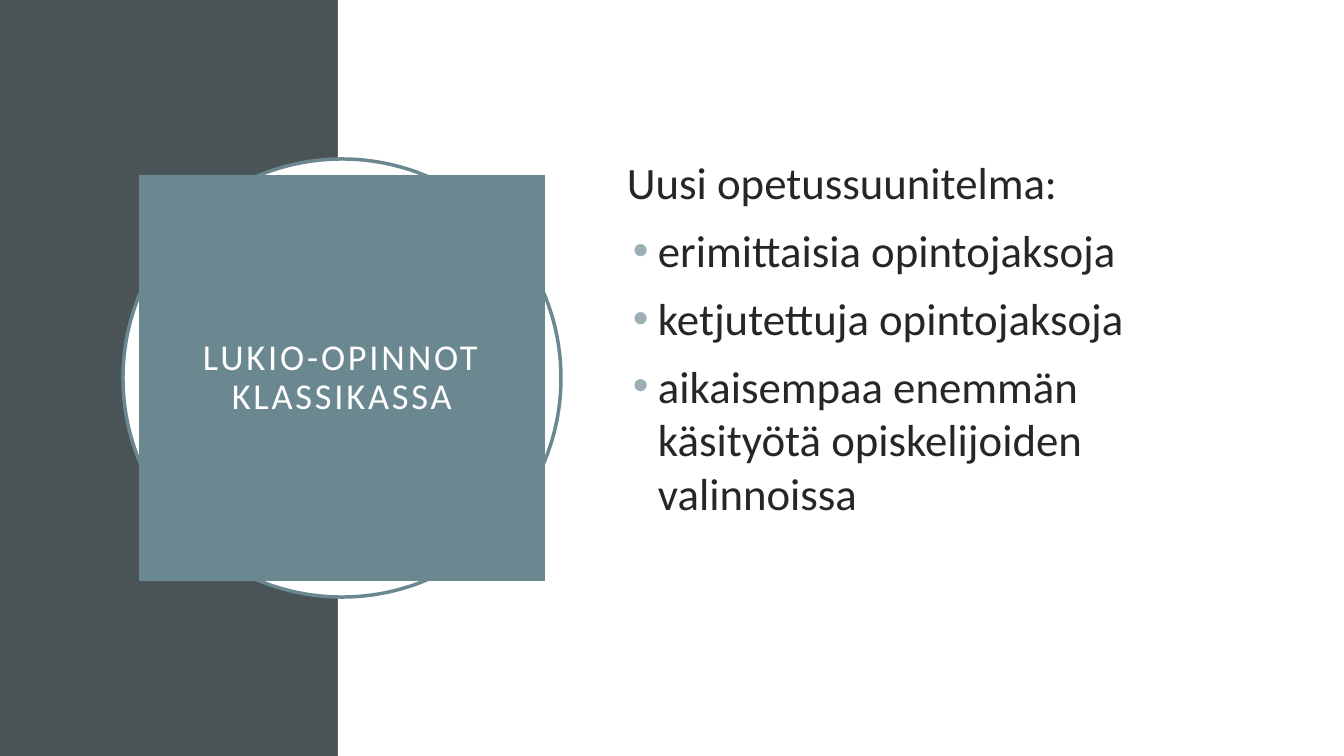
from dataclasses import dataclass

from lxml import etree
from pptx import Presentation
from pptx.dml.color import RGBColor
from pptx.enum.shapes import MSO_SHAPE
from pptx.enum.text import MSO_ANCHOR, PP_ALIGN
from pptx.oxml.ns import qn
from pptx.util import Pt

RECTANGLE = MSO_SHAPE.RECTANGLE
OVAL = MSO_SHAPE.OVAL
TOP, MIDDLE = MSO_ANCHOR.TOP, MSO_ANCHOR.MIDDLE
LEFT, CENTER = PP_ALIGN.LEFT, PP_ALIGN.CENTER

EMU_PER_PX = 12192000 / 1344
PAGE_WIDTH, PAGE_HEIGHT = 1344, 756
BAND_WIDTH = 338
FONT = "Calibri"
COLORS = {
    "slate": "4A5356",
    "teal": "6B8891",
    "bullet": "9BAFB5",
    "ink": "262626",
    "white": "FFFFFF",
}


@dataclass(frozen=True)
class Panel:
    kind: int
    left: int
    top: int
    width: int
    height: int
    fill: str
    line: str = ""


PANELS = [
    Panel(RECTANGLE, 0, 0, BAND_WIDTH, PAGE_HEIGHT, "slate"),
    Panel(RECTANGLE, BAND_WIDTH, 0, PAGE_WIDTH - BAND_WIDTH, PAGE_HEIGHT, "white"),
    Panel(OVAL, 123, 159, 438, 438, "white", "teal"),
]
TITLE_PANEL = Panel(RECTANGLE, 139, 175, 406, 406, "teal")
TITLE = "LUKIO-OPINNOT KLASSIKASSA"
HEADING = "Uusi opetussuunitelma:"
COURSE_POINTS = [
    "erimittaisia opintojaksoja",
    "ketjutettuja opintojaksoja",
    "aikaisempaa enemmän käsityötä opiskelijoiden valinnoissa",
]


def px(length: int) -> int:
    return round(length * EMU_PER_PX)


def color(name: str) -> RGBColor:
    return RGBColor.from_string(COLORS[name])


def draw_panel(page, panel: Panel):
    shape = page.shapes.add_shape(
        panel.kind, px(panel.left), px(panel.top), px(panel.width), px(panel.height)
    )
    shape.shadow.inherit = False
    shape.fill.solid()
    shape.fill.fore_color.rgb = color(panel.fill)
    if panel.line:
        shape.line.color.rgb = color(panel.line)
        shape.line.width = Pt(2.5)
    else:
        shape.line.fill.background()
    return shape


def prepare_frame(shape, *, anchor, inset: int):
    frame = shape.text_frame
    frame.word_wrap = True
    frame.vertical_anchor = anchor
    frame.margin_left = frame.margin_right = px(inset)
    frame.margin_top = frame.margin_bottom = px(inset)
    return frame


def write_text(para, text: str, *, size: int, ink: str, align=LEFT,
               line_spacing: float = 1.0, before: int = 0, tracking: int = 0) -> None:
    para.alignment = align
    para.line_spacing = line_spacing
    para.space_before = Pt(before)
    span = para.add_run()
    span.text = text
    span.font.name = FONT
    span.font.size = Pt(size)
    span.font.color.rgb = color(ink)
    if tracking:
        span.font._element.set("spc", str(tracking * 100))


def add_bullet(para) -> None:
    properties = para._p.get_or_add_pPr()
    properties.set("marL", str(px(31)))
    properties.set("indent", str(px(-25)))
    bullet_color = etree.SubElement(properties, qn("a:buClr"))
    etree.SubElement(bullet_color, qn("a:srgbClr"), val=COLORS["bullet"])
    etree.SubElement(properties, qn("a:buFont"), typeface="Arial")
    etree.SubElement(properties, qn("a:buChar"), char="•")


def main() -> None:
    deck = Presentation()
    deck.slide_width, deck.slide_height = px(PAGE_WIDTH), px(PAGE_HEIGHT)
    page = deck.slides.add_slide(deck.slide_layouts[6])

    for panel in PANELS:
        draw_panel(page, panel)

    title = prepare_frame(draw_panel(page, TITLE_PANEL), anchor=MIDDLE, inset=20)
    write_text(title.paragraphs[0], TITLE, size=26, ink="white", align=CENTER,
               line_spacing=0.9, tracking=2)

    box = page.shapes.add_textbox(px(617), px(145), px(587), px(390))
    body = prepare_frame(box, anchor=TOP, inset=10)
    write_text(body.paragraphs[0], HEADING, size=32, ink="ink")
    for point in COURSE_POINTS:
        para = body.add_paragraph()
        write_text(para, point, size=32, ink="ink", before=10)
        add_bullet(para)

    deck.save("out.pptx")


if __name__ == "__main__":
    main()
